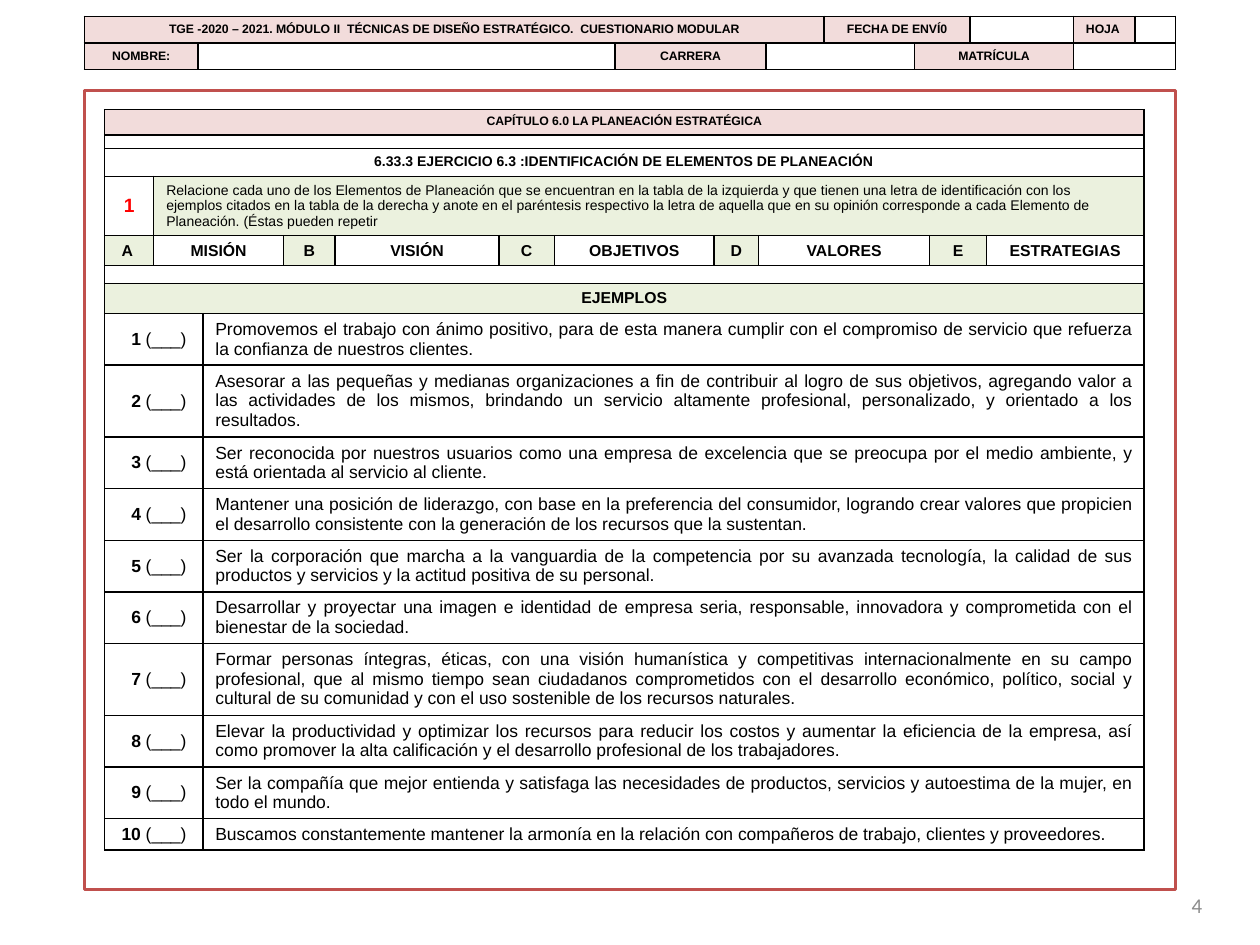
from lxml import etree
from pptx import Presentation, util as u
from pptx.dml.color import RGBColor
from pptx.enum import shapes, text
from pptx.oxml.ns import qn

PINK, GREEN, BLACK, RED = "F2DCDB", "EBF1DE", "000000", "FF0000"
LEFT, CENTER = text.PP_ALIGN.LEFT, text.PP_ALIGN.CENTER
RIGHT, JUSTIFY = text.PP_ALIGN.RIGHT, text.PP_ALIGN.JUSTIFY


def add_grid(s, left, top, cols, rows):
    """Add a table without fills, with thin black borders on every cell."""
    frame = s.shapes.add_table(len(rows), len(cols), u.Inches(left), u.Inches(top),
                               u.Inches(sum(cols)), u.Inches(sum(rows)))
    tbl = frame.table
    tbl.first_row = tbl.horz_banding = False
    for col, width in zip(tbl.columns, cols):
        col.width = u.Inches(width)
    for row, height in zip(tbl.rows, rows):
        row.height = u.Inches(height)
    for cell in tbl.iter_cells():
        tc_pr = cell._tc.get_or_add_tcPr()
        for side in ("lnL", "lnR", "lnT", "lnB"):
            ln = etree.SubElement(tc_pr, qn(f"a:{side}"), w=str(u.Pt(1)))
            solid = etree.SubElement(ln, qn("a:solidFill"))
            etree.SubElement(solid, qn("a:srgbClr"), val=BLACK)
        cell.fill.background()
        cell.margin_top = cell.margin_bottom = 0
        cell.text_frame.paragraphs[0]._p.get_or_add_endParaRPr().set("sz", "400")
    return tbl


def put(tbl, row, col, words="", span=1, fill=None, size=7, align=CENTER,
        bold=True, color=BLACK, plain=""):
    """Fill a cell, merged over span columns; plain is a tail that is not bold."""
    cell = tbl.cell(row, col)
    if span > 1:
        cell.merge(tbl.cell(row, col + span - 1))
    if fill:
        cell.fill.solid()
        cell.fill.fore_color.rgb = RGBColor.from_string(fill)
    if words:
        cell.margin_top = cell.margin_bottom = u.Inches(0.02)
        cell.vertical_anchor = text.MSO_ANCHOR.MIDDLE
        p = cell.text_frame.paragraphs[0]
        p.alignment = align
        for part, weight in ((words, bold), (plain, False)):
            if part:
                r = p.add_run()
                r.text = part
                r.font.name, r.font.size, r.font.bold = "Arial", u.Pt(size), weight
                r.font.color.rgb = RGBColor.from_string(color)
    return cell


prs = Presentation()
prs.slide_width, prs.slide_height = u.Inches(10), u.Inches(7.5)
s = prs.slides.add_slide(prs.slide_layouts[6])

# Page number
sp = s.shapes.add_textbox(u.Inches(7.2), u.Inches(6.98), u.Inches(2.44), u.Inches(0.41))
tf = sp.text_frame
tf.word_wrap = True
tf.vertical_anchor = text.MSO_ANCHOR.MIDDLE
p = tf.paragraphs[0]
p.alignment = RIGHT
r = p.add_run()
r.text = "4"
r.font.name, r.font.size = "Calibri", u.Pt(12)
r.font.color.rgb = RGBColor.from_string("8C8C8C")

# Form header
header = add_grid(s, 0.67, 0.13, [0.9, 3.31, 1.2, 0.46, 0.72, 0.44, 0.82, 0.49, 0.32],
                  [0.21, 0.21])
put(header, 0, 0, "TGE -2020 – 2021. MÓDULO II  TÉCNICAS DE DISEÑO ESTRATÉGICO.  "
    "CUESTIONARIO MODULAR", 4, PINK)
put(header, 0, 4, "FECHA DE ENVÍ0", 2, PINK)
put(header, 0, 7, "HOJA", 1, PINK, align=LEFT)
put(header, 1, 0, "NOMBRE:", 1, PINK)
put(header, 1, 2, "CARRERA", 1, PINK)
put(header, 1, 3, span=2)
put(header, 1, 5, "MATRÍCULA", 2, PINK)
put(header, 1, 7, span=2)

# Exercise
examples = [
    "Promovemos el trabajo con ánimo positivo, para de esta manera cumplir con el compromiso "
    "de servicio que refuerza la confianza de nuestros clientes.",
    "Asesorar a las pequeñas y medianas organizaciones a fin de contribuir al logro de sus "
    "objetivos, agregando valor a las actividades de los mismos, brindando un servicio "
    "altamente profesional, personalizado, y orientado a los resultados.",
    "Ser reconocida por nuestros usuarios como una empresa de excelencia que se preocupa por "
    "el medio ambiente, y está orientada al servicio al cliente.",
    "Mantener una posición de liderazgo, con base en la preferencia del consumidor, logrando "
    "crear valores que propicien el desarrollo consistente con la generación de los recursos "
    "que la sustentan.",
    "Ser la corporación que marcha a la vanguardia de la competencia por su avanzada "
    "tecnología, la calidad de sus productos y servicios y la actitud positiva de su personal.",
    "Desarrollar y proyectar una imagen e identidad de empresa seria, responsable, innovadora "
    "y comprometida con el bienestar de la sociedad.",
    "Formar personas íntegras, éticas, con una visión humanística y competitivas "
    "internacionalmente en su campo profesional, que al mismo tiempo sean ciudadanos "
    "comprometidos con el desarrollo económico, político, social y cultural de su comunidad "
    "y con el uso sostenible de los recursos naturales.",
    "Elevar la productividad y optimizar los recursos para reducir los costos y aumentar la "
    "eficiencia de la empresa, así como promover la alta calificación y el desarrollo "
    "profesional de los trabajadores.",
    "Ser la compañía que mejor entienda y satisfaga las necesidades de productos, servicios y "
    "autoestima de la mujer, en todo el mundo.",
    "Buscamos constantemente mantener la armonía en la relación con compañeros de trabajo, "
    "clientes y proveedores.",
]
row_heights = {1: 0.25, 2: 0.41, 3: 0.57}
example_lines = [2, 3, 2, 2, 2, 2, 3, 2, 2, 1]
exercise = add_grid(
    s, 0.83, 0.87, [0.39, 0.39, 0.64, 0.41, 1.3, 0.44, 1.27, 0.35, 1.36, 0.45, 1.25],
    [0.2, 0.11, 0.22, 0.47, 0.24, 0.14, 0.24] + [row_heights[n] for n in example_lines])
title = put(exercise, 0, 0, "CAPÍTULO 6.0 LA PLANEACIÓN ESTRATÉGICA", 11, PINK)
subtitle = put(exercise, 2, 0, "6.33.3 EJERCICIO 6.3 :IDENTIFICACIÓN DE ELEMENTOS DE PLANEACIÓN",
               11, size=8)
for cell in (title, subtitle):
    cell.text_frame.paragraphs[0].line_spacing = 0.9
for row in (1, 5):
    put(exercise, row, 0, span=11)
put(exercise, 3, 0, "1", size=11, color=RED)
put(exercise, 3, 1, "Relacione cada uno de los Elementos de Planeación que se encuentran en la "
    "tabla de la izquierda y que tienen una letra de identificación con los ejemplos citados "
    "en la tabla de la derecha y anote en el paréntesis respectivo la letra de aquella que en "
    "su opinión corresponde a cada Elemento de Planeación. (Éstas pueden repetir",
    10, GREEN, 8, LEFT, False)

elements = [("A ", 0, "MISIÓN", 2), ("B", 3, "VISIÓN", 1), ("C", 5, "OBJETIVOS", 1),
            ("D", 7, "VALORES", 1), ("E", 9, "ESTRATEGIAS", 1)]
for letter, col, name, span in elements:
    put(exercise, 4, col, letter, fill=GREEN, size=9)
    put(exercise, 4, col + 1, name, span, size=9)
put(exercise, 6, 0, "EJEMPLOS", 11, GREEN, 9)

for number, example in enumerate(examples, 1):
    answer = put(exercise, 6 + number, 0, str(number), 2, size=10, align=RIGHT, plain=" (___)")
    answer.margin_right = u.Inches(0.13)
    sentence = put(exercise, 6 + number, 2, example, 9, size=10, align=JUSTIFY, bold=False)
    sentence.vertical_anchor = text.MSO_ANCHOR.TOP
    sentence.margin_top, sentence.margin_bottom = u.Inches(0.05), 0

# Page frame
frame = s.shapes.add_shape(shapes.MSO_SHAPE.RECTANGLE, u.Inches(0.67), u.Inches(0.72),
                           u.Inches(8.66), u.Inches(6.34))
frame.shadow.inherit = False
frame.fill.background()
frame.line.color.rgb = RGBColor.from_string("C0504D")
frame.line.width = u.Pt(2)

prs.save("out.pptx")
